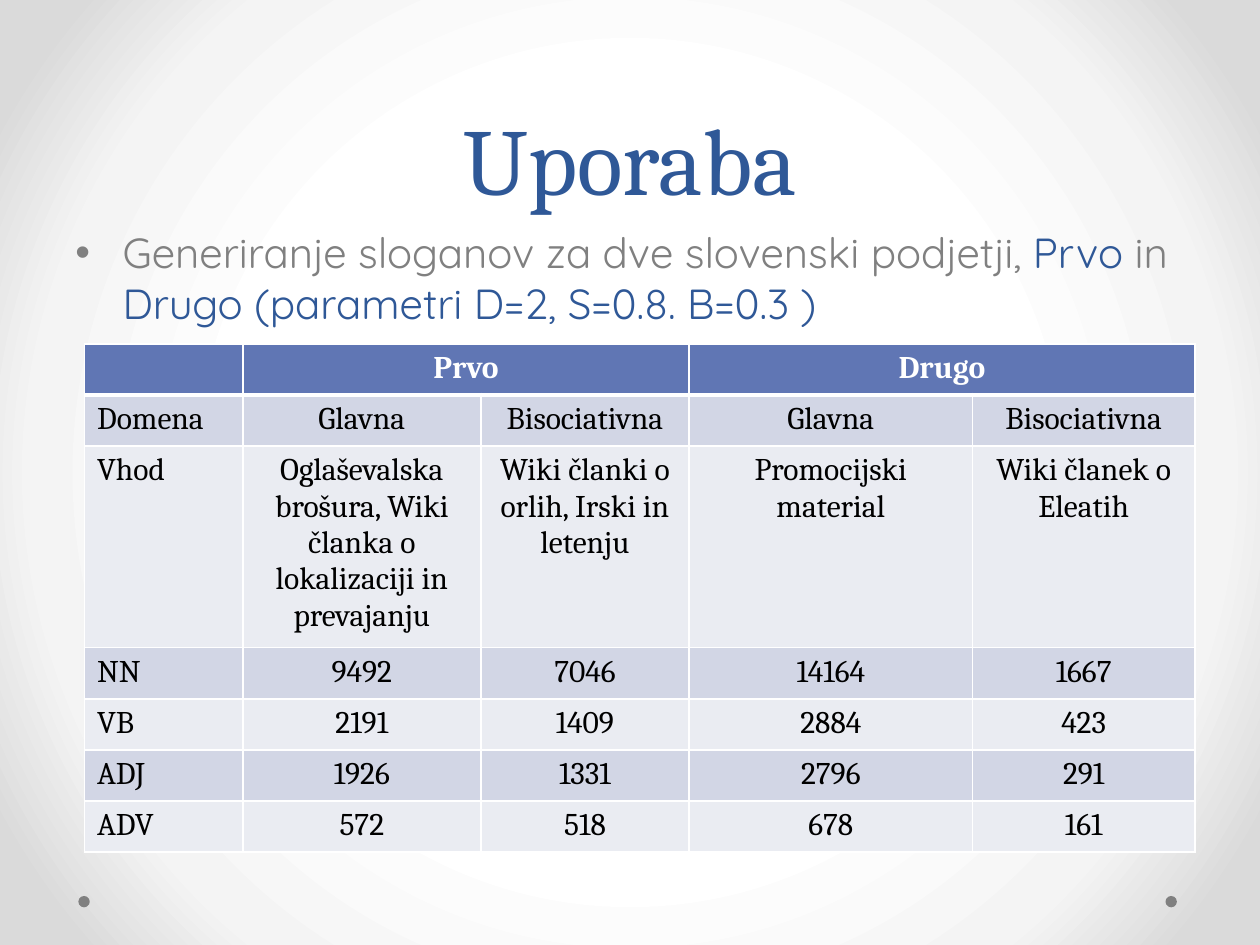
from lxml import etree
from pptx import Presentation
from pptx.dml.color import RGBColor
from pptx.enum.shapes import MSO_SHAPE
from pptx.enum.text import MSO_ANCHOR, PP_ALIGN
from pptx.oxml import parse_xml
from pptx.oxml.ns import nsdecls, qn
from pptx.util import Pt

OVAL = MSO_SHAPE.OVAL
BOTTOM, TOP = MSO_ANCHOR.BOTTOM, MSO_ANCHOR.TOP
CENTER, LEFT = PP_ALIGN.CENTER, PP_ALIGN.LEFT

BLUE = RGBColor(0x2F, 0x58, 0x97)
GRAY = RGBColor(0x80, 0x80, 0x80)
HEADER = RGBColor(0x60, 0x76, 0xB4)
BANDS = [RGBColor(0xD2, 0xD6, 0xE5), RGBColor(0xEA, 0xEC, 0xF2)]
WHITE = RGBColor(0xFF, 0xFF, 0xFF)
BLACK = RGBColor(0x00, 0x00, 0x00)
BACKGROUND_STOPS = [(50, WHITE), (76, RGBColor(0xF4, 0xF4, 0xF4)), (92, RGBColor(0xDA, 0xDA, 0xDA))]

SERIF, SANS = "Cambria", "Quicksand"
TITLE = "Uporaba"
BULLET_RUNS = [
    ("Generiranje sloganov za dve slovenski podjetji, ", GRAY),
    ("Prvo", BLUE),
    (" in ", GRAY),
    ("Drugo (parametri D=2, S=0.8. B=0.3 )", BLUE),
]
ROWS = [
    ("", "Prvo", "", "Drugo", ""),
    ("Domena", "Glavna", "Bisociativna", "Glavna", "Bisociativna"),
    ("Vhod", "Oglaševalska brošura, Wiki članka o lokalizaciji in prevajanju",
     "Wiki članki o orlih, Irski in letenju", "Promocijski material", "Wiki članek o Eleatih"),
    ("NN", "9492", "7046", "14164", "1667"),
    ("VB", "2191", "1409", "2884", "423"),
    ("ADJ", "1926", "1331", "2796", "291"),
    ("ADV", "572", "518", "678", "161"),
]
COLUMN_WIDTHS = [90.5, 136, 119, 162, 127]
ROW_HEIGHT, INPUT_ROW, INPUT_ROW_HEIGHT = 29.2, 2, 111.4
HEADER_SPANS = [(1, 2), (3, 4)]
DOT_LEFTS, DOT_TOP, DOT_SIZE = [44.8, 666], 512, 6.5


def paint_background(slide):
    slide.background.fill.gradient()
    gradient = slide.element.find(".//" + qn("a:gradFill"))
    for child in list(gradient):
        gradient.remove(child)
    stops = etree.SubElement(gradient, qn("a:gsLst"))
    for position, color in BACKGROUND_STOPS:
        stop = etree.SubElement(stops, qn("a:gs"), pos=str(position * 1000))
        etree.SubElement(stop, qn("a:srgbClr"), val=str(color))
    circle = etree.SubElement(gradient, qn("a:path"), path="circle")
    etree.SubElement(circle, qn("a:fillToRect"), l="50000", t="50000", r="50000", b="50000")


def add_dots(slide):
    for left in DOT_LEFTS:
        dot = slide.shapes.add_shape(OVAL, Pt(left), Pt(DOT_TOP), Pt(DOT_SIZE), Pt(DOT_SIZE))
        dot.shadow.inherit = False
        dot.fill.solid()
        dot.fill.fore_color.rgb = GRAY
        dot.line.fill.background()


def style(font, name, size, color, bold=False):
    font.name = name
    font.size = Pt(size)
    font.color.rgb = color
    font.bold = bold


def add_text(slide, top, height, anchor, runs, name, size):
    box = slide.shapes.add_textbox(Pt(36), Pt(top), Pt(648), Pt(height))
    box.text_frame.word_wrap = True
    box.text_frame.vertical_anchor = anchor
    paragraph = box.text_frame.paragraphs[0]
    for text, color in runs:
        run = paragraph.add_run()
        run.text = text
        style(run.font, name, size, color)
    return paragraph


def add_bullet(paragraph):
    properties = paragraph._p.get_or_add_pPr()
    properties.set("marL", str(Pt(27)))
    properties.set("indent", str(-Pt(27)))
    bullet_color = etree.SubElement(properties, qn("a:buClr"))
    etree.SubElement(bullet_color, qn("a:srgbClr"), val=str(GRAY))
    etree.SubElement(properties, qn("a:buFont"), typeface="Arial")
    etree.SubElement(properties, qn("a:buChar"), char="•")


def set_borders(cell, row_index):
    widths = {"L": 1, "R": 1, "T": 3 if row_index == 1 else 1, "B": 3 if row_index == 0 else 1}
    properties = cell._tc.get_or_add_tcPr()
    for position, (side, width) in enumerate(widths.items()):
        properties.insert(position, parse_xml(
            f'<a:ln{side} {nsdecls("a")} w="{Pt(width)}"><a:solidFill>'
            f'<a:srgbClr val="{WHITE}"/></a:solidFill></a:ln{side}>'))


def add_usage_table(slide):
    height = ROW_HEIGHT * (len(ROWS) - 1) + INPUT_ROW_HEIGHT
    table = slide.shapes.add_table(len(ROWS), len(COLUMN_WIDTHS), Pt(48.3), Pt(196.5),
                                   Pt(sum(COLUMN_WIDTHS)), Pt(height)).table
    for column, width in zip(table.columns, COLUMN_WIDTHS):
        column.width = Pt(width)
    for row_index, texts in enumerate(ROWS):
        is_header = row_index == 0
        table.rows[row_index].height = Pt(INPUT_ROW_HEIGHT if row_index == INPUT_ROW else ROW_HEIGHT)
        for column_index, text in enumerate(texts):
            cell = table.cell(row_index, column_index)
            cell.fill.solid()
            cell.fill.fore_color.rgb = HEADER if is_header else BANDS[(row_index - 1) % 2]
            set_borders(cell, row_index)
            cell.text_frame.text = text
            paragraph = cell.text_frame.paragraphs[0]
            paragraph.alignment = CENTER if column_index else LEFT
            style(paragraph.font, SERIF, 18, WHITE if is_header else BLACK, is_header)
            for run in paragraph.runs:
                style(run.font, SERIF, 18, WHITE if is_header else BLACK, is_header)
    for first, last in HEADER_SPANS:
        table.cell(0, first).merge(table.cell(0, last))


def main():
    presentation = Presentation()
    presentation.slide_width, presentation.slide_height = Pt(720), Pt(540)
    slide = presentation.slides.add_slide(presentation.slide_layouts[6])
    paint_background(slide)
    add_dots(slide)
    title = add_text(slide, 0, 126, BOTTOM, [(TITLE, BLUE)], SERIF, 54)
    title.alignment = CENTER
    title.line_spacing = Pt(58)
    body = add_text(slide, 126, 356.4, TOP, BULLET_RUNS, SANS, 24)
    body.space_before = Pt(4.8)
    add_bullet(body)
    add_usage_table(slide)
    presentation.save("out.pptx")


if __name__ == "__main__":
    main()
